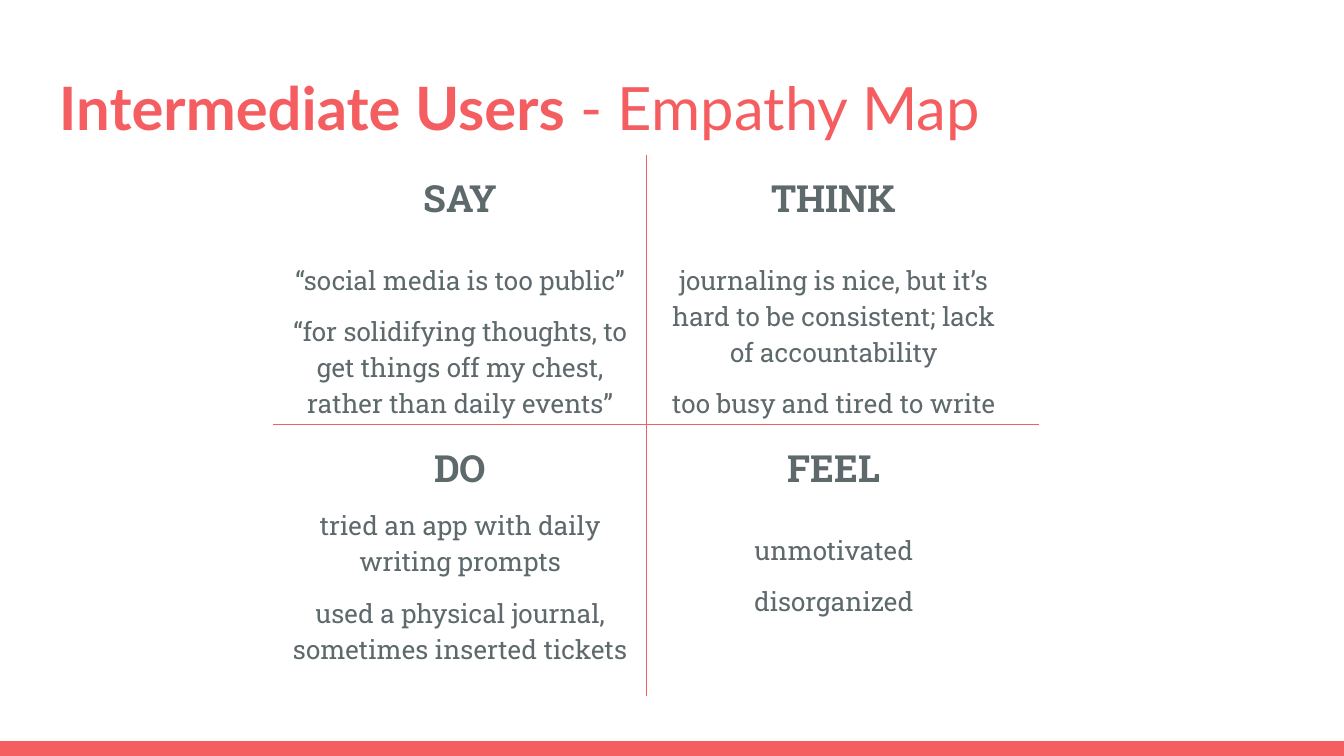
from pptx import Presentation
from pptx.dml.color import RGBColor
from pptx.enum.shapes import MSO_CONNECTOR, MSO_SHAPE
from pptx.enum.text import MSO_ANCHOR, PP_ALIGN
from pptx.oxml.ns import qn
from pptx.util import Inches, Pt
from lxml import etree

CORAL = RGBColor(0xF5, 0x5E, 0x61)
SLATE = RGBColor(0x5E, 0x69, 0x6C)
TITLE_FONT = "Lato"
BODY_FONT = "Roboto Slab"

SLIDE_WIDTH = 10
SLIDE_HEIGHT = SLIDE_WIDTH * 9 / 16
FOOTER_HEIGHT = 0.11
MAP_LEFT, MAP_TOP = 2.03, 1.15
COLUMN_STEP, ROW_STEP = 2.78, 2.01
QUADRANT_WIDTH = 2.79
CENTER_X = MAP_LEFT + COLUMN_STEP
CENTER_Y = MAP_TOP + ROW_STEP
ITEM_GAP = 8.3
WIDE_GAP = 21.4

# Column, row, heading, gap below the heading in points, items
QUADRANTS = [
    (0, 0, "SAY", WIDE_GAP, [
        "“social media is too public”",
        "“for solidifying thoughts, to get things off my chest, "
        "rather than daily events”",
    ]),
    (1, 0, "THINK", WIDE_GAP, [
        "journaling is nice, but it’s hard to be consistent; "
        "lack of accountability",
        "too busy and tired to write",
    ]),
    (1, 1, "FEEL", WIDE_GAP, ["unmotivated", "disorganized"]),
    (0, 1, "DO", ITEM_GAP, [
        "tried an app with daily writing prompts",
        "used a physical journal, sometimes inserted tickets",
    ]),
]


def add_footer_bar(slide):
    bar = slide.shapes.add_shape(
        MSO_SHAPE.RECTANGLE, 0, Inches(SLIDE_HEIGHT - FOOTER_HEIGHT),
        Inches(SLIDE_WIDTH), Inches(FOOTER_HEIGHT))
    bar.shadow.inherit = False
    bar.fill.solid()
    bar.fill.fore_color.rgb = CORAL
    bar.line.fill.background()


def add_text_frame(slide, left, top, width, height):
    frame = slide.shapes.add_textbox(
        Inches(left), Inches(top), Inches(width), Inches(height)).text_frame
    frame.word_wrap = True
    frame.vertical_anchor = MSO_ANCHOR.TOP
    frame.margin_left = frame.margin_right = Inches(0.1)
    frame.margin_top = frame.margin_bottom = Inches(0.1)
    return frame


def add_run(paragraph, text, font_name, size, color, bold=False):
    run = paragraph.add_run()
    run.text = text
    run.font.name = font_name
    run.font.size = Pt(size)
    run.font.bold = bold
    run.font.color.rgb = color


def add_title(slide):
    title = add_text_frame(slide, 0.34, 0.43, 9.32, 0.68).paragraphs[0]
    add_run(title, "Intermediate Users", TITLE_FONT, 32, CORAL, bold=True)
    add_run(title, " - Empathy Map", TITLE_FONT, 32, CORAL)


def add_axis(slide, x1, y1, x2, y2):
    axis = slide.shapes.add_connector(
        MSO_CONNECTOR.STRAIGHT, Inches(x1), Inches(y1), Inches(x2), Inches(y2))
    axis.line.color.rgb = CORAL
    axis.line.width = Pt(0.75)
    etree.SubElement(axis._element.spPr, qn("a:effectLst"))


def format_paragraph(paragraph, gap_before=0):
    paragraph.alignment = PP_ALIGN.CENTER
    paragraph.line_spacing = 1.15
    paragraph.space_before = Pt(gap_before)


def add_quadrant(slide, column, row, heading, heading_gap, items):
    frame = add_text_frame(
        slide, MAP_LEFT + column * COLUMN_STEP, MAP_TOP + row * ROW_STEP,
        QUADRANT_WIDTH, ROW_STEP)
    heading_line = frame.paragraphs[0]
    format_paragraph(heading_line)
    add_run(heading_line, heading, BODY_FONT, 20, SLATE, bold=True)
    for index, item in enumerate(items):
        item_line = frame.add_paragraph()
        format_paragraph(item_line, ITEM_GAP if index else heading_gap)
        add_run(item_line, item, BODY_FONT, 14, SLATE)


def main():
    deck = Presentation()
    deck.slide_width = Inches(SLIDE_WIDTH)
    deck.slide_height = Inches(SLIDE_HEIGHT)
    slide = deck.slides.add_slide(deck.slide_layouts[6])

    add_footer_bar(slide)
    add_title(slide)
    add_axis(slide, CENTER_X, MAP_TOP, CENTER_X, 5.18)
    add_axis(slide, 7.73, CENTER_Y, MAP_LEFT, CENTER_Y)
    for quadrant in QUADRANTS:
        add_quadrant(slide, *quadrant)

    deck.save("out.pptx")


if __name__ == "__main__":
    main()
